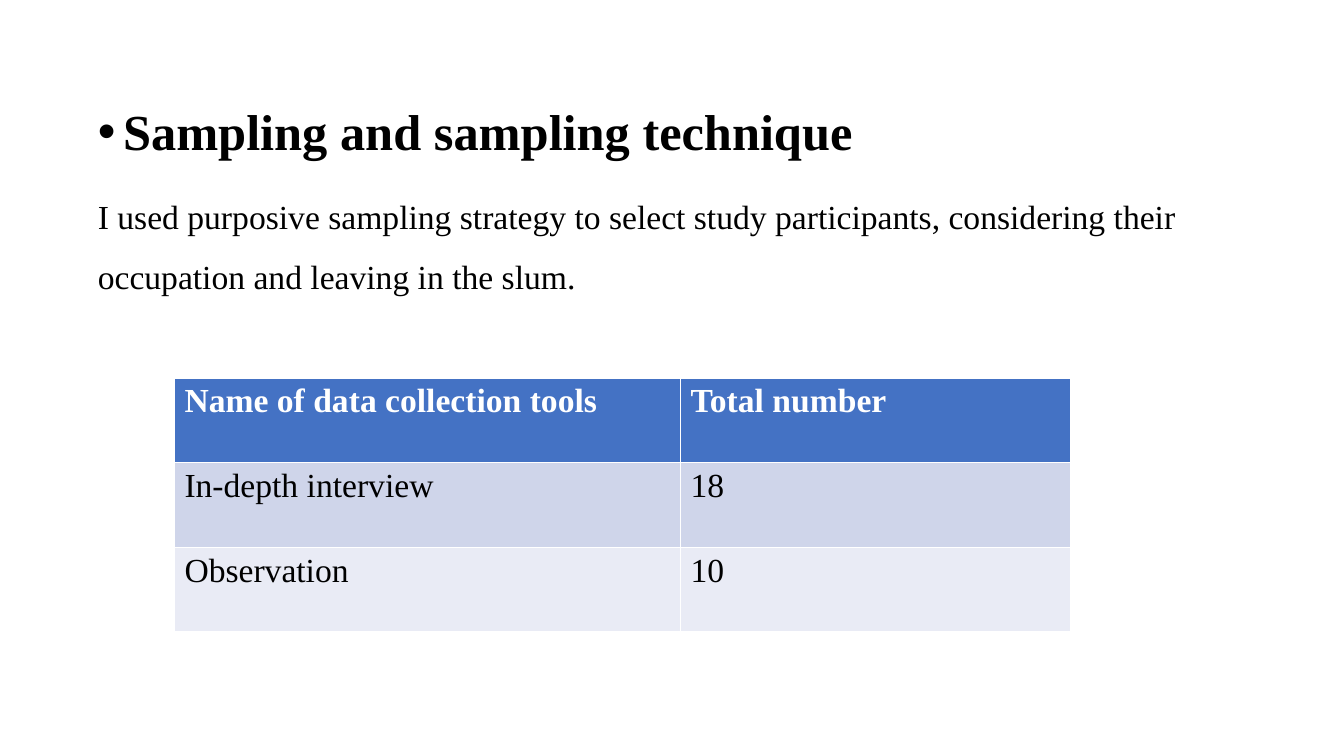
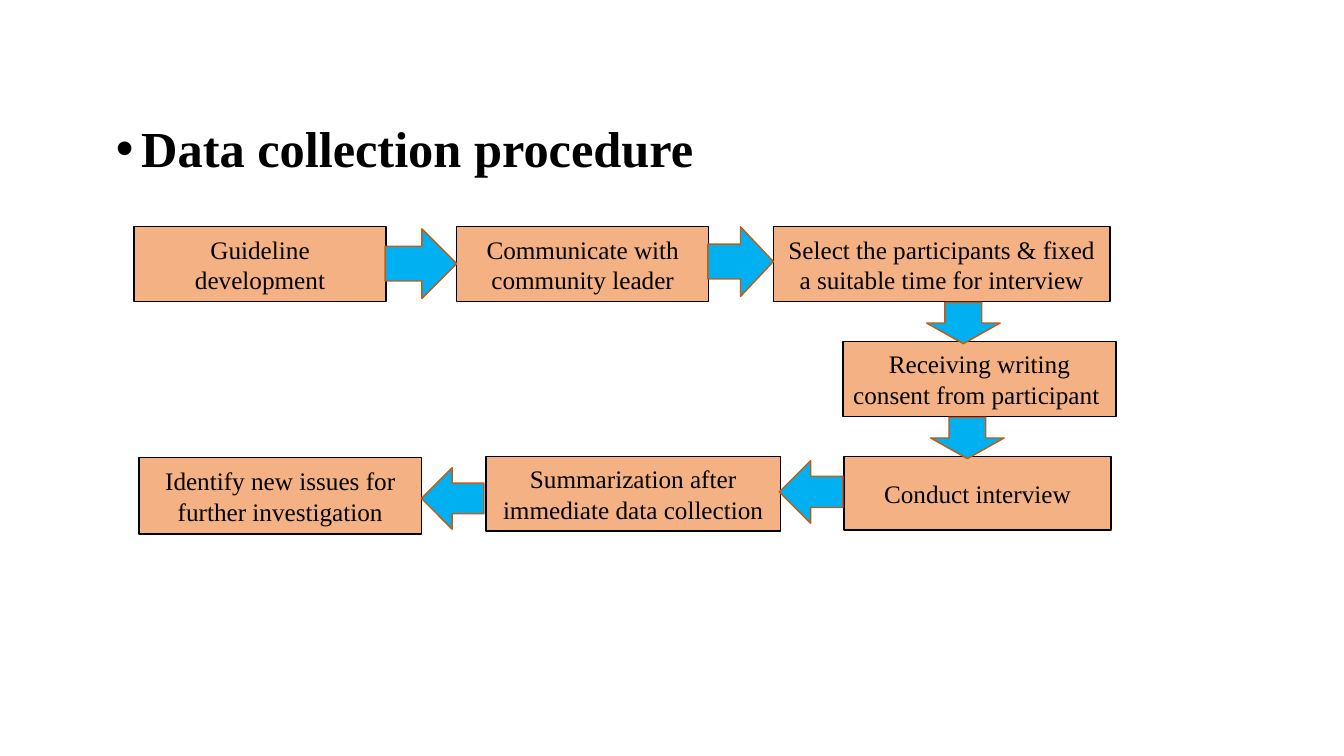
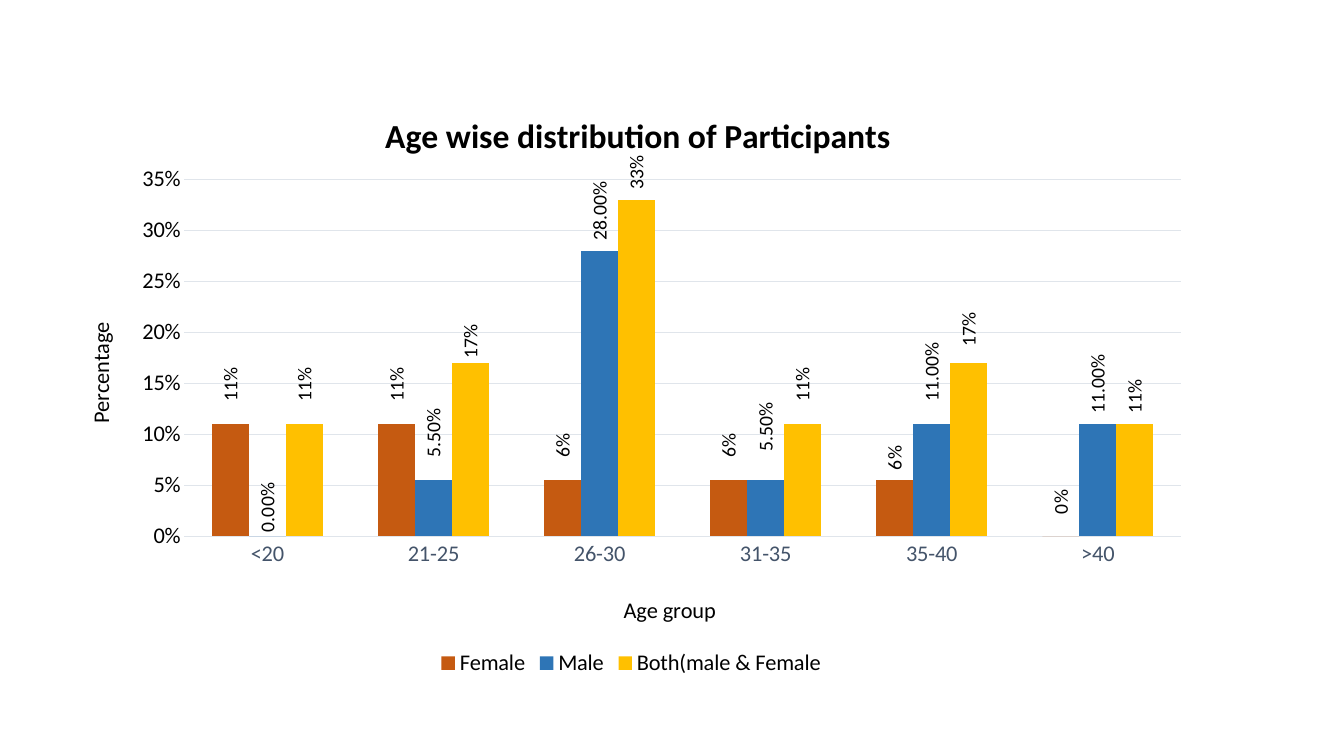
from copy import deepcopy

from lxml import etree
from pptx import Presentation
from pptx.chart.data import CategoryChartData
from pptx.dml.color import RGBColor
from pptx.enum.chart import (XL_CHART_TYPE as CHART, XL_LABEL_POSITION as LABEL,
                             XL_LEGEND_POSITION as LEGEND, XL_TICK_MARK as TICK)
from pptx.enum.shapes import MSO_SHAPE as SHAPE
from pptx.enum.text import MSO_ANCHOR as ANCHOR, MSO_AUTO_SIZE as AUTO, PP_ALIGN as ALIGN
from pptx.oxml.ns import qn
from pptx.util import Inches, Pt

COLORS = {
    "text": "000000", "white": "FFFFFF", "header": "4472C4",
    "band_dark": "CFD5EA", "band_light": "E9EBF5",
    "step": "F4B183", "arrow": "00B0F0", "arrow_line": "C55A11",
    "grid": "E0E5EB", "category": "44546A",
    "female": "C55A11", "male": "2E75B6", "both": "FFC000",
}
SERIF, SANS = "Times New Roman", "Calibri"


def rgb(name):
    return RGBColor.from_string(COLORS[name])


def set_font(font, size, color="text", name=SERIF, bold=False):
    font.name, font.size, font.bold = name, Pt(size), bold
    font.color.rgb = rgb(color)


def set_bullet(p, char=None):
    pPr = p._p.get_or_add_pPr()
    indent = Inches(0.25) if char else 0
    pPr.set("marL", str(indent))
    pPr.set("indent", str(-indent))
    if char:
        pPr.insert_element_before(etree.Element(qn("a:buFont"), typeface="Arial"), "a:defRPr")
        pPr.insert_element_before(etree.Element(qn("a:buChar"), char=char), "a:defRPr")
    else:
        pPr.insert_element_before(etree.Element(qn("a:buNone")), "a:defRPr")


# Slide with a bulleted heading and optional text in the body placeholder
def add_body_slide(prs, box, heading, text=None):
    s = prs.slides.add_slide(prs.slide_layouts[1])
    title = s.shapes.title
    title.element.getparent().remove(title.element)
    body = s.placeholders[1]
    body.left, body.top, body.width, body.height = map(Inches, box)
    tf = body.text_frame
    tf.auto_size, tf.vertical_anchor = AUTO.NONE, ANCHOR.TOP
    p = tf.paragraphs[0]
    p.text, p.line_spacing, p.space_before = heading, 0.9, Pt(10)
    set_font(p.font, 36, bold=True)
    set_bullet(p, "•")
    if text:
        p = tf.add_paragraph()
        p.text, p.line_spacing, p.space_before = text, 1.5, Pt(10)
        set_font(p.font, 24)
        set_bullet(p)
    return s


# Table with a header row and alternating bands
def add_tools_table(s, left, top, widths, row_height, rows):
    frame = s.shapes.add_table(len(rows), len(widths), Inches(left), Inches(top),
                               Inches(sum(widths)), Inches(row_height * len(rows)))
    table = frame.table
    for column, width in zip(table.columns, widths):
        column.width = Inches(width)
    fills = ["header", "band_dark", "band_light"]
    for i, row in enumerate(rows):
        for j, text in enumerate(row):
            cell = table.cell(i, j)
            cell.text = text
            cell.fill.solid()
            cell.fill.fore_color.rgb = rgb(fills[i])
            set_font(cell.text_frame.paragraphs[0].font, 24,
                     "text" if i else "white", bold=i == 0)


# Flow chart: offsets are counted from its top left corner
def add_flow(s, left, top, steps, arrows):
    def add_block(kind, box, fill, line):
        x, y, w, h = box
        sp = s.shapes.add_shape(kind, Inches(left + x), Inches(top + y), Inches(w), Inches(h))
        sp.shadow.inherit = False
        sp.fill.solid()
        sp.fill.fore_color.rgb = rgb(fill)
        sp.line.color.rgb = rgb(line)
        sp.line.width = Pt(1)
        return sp

    for text, *box in steps:
        tf = add_block(SHAPE.RECTANGLE, box, "step", "text").text_frame
        tf.word_wrap, tf.vertical_anchor = True, ANCHOR.MIDDLE
        p = tf.paragraphs[0]
        p.text, p.alignment = text, ALIGN.CENTER
        set_font(p.font, 18)
    for kind, *box in arrows:
        add_block(kind, box, "arrow", "arrow_line")


# Chart parts are placed by fractions of the chart's size
def set_layout(element, index, **values):
    layout = element.find(qn("c:layout"))
    if layout is None:
        layout = etree.Element(qn("c:layout"))
        element.insert(index, layout)
    manual = etree.SubElement(layout, qn("c:manualLayout"))
    for tag, value in values.items():
        etree.SubElement(manual, qn("c:" + tag)).set("val", str(value))


def set_title(title, text, size, x, y, bold=False):
    p = title.text_frame.paragraphs[0]
    p.text = text
    set_font(p.font, size, name=SANS, bold=bold)
    set_layout(title.element, 1, xMode="edge", yMode="edge", x=x, y=y)


def add_value_labels(series, ser, number_format, lifts):
    labels = series.data_labels
    labels.show_value = True
    labels.position = LABEL.OUTSIDE_END
    labels.number_format, labels.number_format_is_linked = number_format, False
    set_font(labels.font, 14, name=SANS)
    dLbls = ser.find(qn("c:dLbls"))
    body = dLbls.find(qn("c:txPr")).find(qn("a:bodyPr"))
    body.set("rot", "-5400000")
    body.set("vert", "horz")
    for i, lift in enumerate(lifts):
        if lift:
            series.points[i].data_label.position = LABEL.OUTSIDE_END
    # Raised labels keep the format of their series
    for label in dLbls.findall(qn("c:dLbl")):
        lift = lifts[int(label.find(qn("c:idx")).get("val"))]
        old = label.find(qn("c:txPr"))
        if old is not None:
            label.remove(old)
        set_layout(label, 1, x=0, y=-lift)
        label.insert(2, deepcopy(dLbls.find(qn("c:numFmt"))))
        spPr = label.find(qn("c:spPr"))
        at = 3 if spPr is None else label.index(spPr) + 1
        label.insert(at, deepcopy(dLbls.find(qn("c:txPr"))))


def add_age_chart(s, box, categories, series_rows):
    data = CategoryChartData()
    data.categories = categories
    for name, _, _, values, _ in series_rows:
        data.add_series(name, values)
    chart = s.shapes.add_chart(CHART.COLUMN_CLUSTERED, *map(Inches, box), data).chart
    set_font(chart.font, 10, name=SANS)
    chart.has_title = True
    set_title(chart.chart_title, "Age wise distribution of Participants", 24, 0.28, 0.05, True)
    plot_area = next(chart.element.iter(qn("c:plotArea")))
    set_layout(plot_area, 0, layoutTarget="inner", xMode="edge", yMode="edge",
               x=0.11, y=0.17, w=0.87, h=0.59)

    # Legend
    chart.has_legend = True
    chart.legend.position, chart.legend.include_in_layout = LEGEND.BOTTOM, False
    set_font(chart.legend.font, 16, name=SANS)

    # Axes
    cat, val = chart.category_axis, chart.value_axis
    for axis, color in ((cat, "category"), (val, "text")):
        axis.major_tick_mark = axis.minor_tick_mark = TICK.NONE
        set_font(axis.tick_labels.font, 16, color, SANS)
    set_title(cat.axis_title, "Age group", 16, 0.49, 0.85)
    set_title(val.axis_title, "Percentage", 16, 0.02, 0.4)
    val.minimum_scale, val.maximum_scale, val.major_unit = 0, 0.35, 0.05
    val.tick_labels.number_format, val.tick_labels.number_format_is_linked = "0%", False
    val.format.line.fill.background()
    for line in (cat.format.line, val.major_gridlines.format.line):
        line.color.rgb = rgb("grid")
        line.width = Pt(0.75)

    # Series
    plot = chart.plots[0]
    plot.gap_width, plot.overlap, plot.vary_by_categories = 150, 0, False
    sers = plot_area.iter(qn("c:ser"))
    for series, ser, (_, color, number_format, _, lifts) in zip(
            plot.series, list(sers), series_rows):
        series.format.fill.solid()
        series.format.fill.fore_color.rgb = rgb(color)
        add_value_labels(series, ser, number_format, lifts)


def main():
    prs = Presentation()
    prs.slide_width, prs.slide_height = Inches(13.33), Inches(7.5)

    # Sampling
    s = add_body_slide(
        prs, (0.87, 1.01, 11.99, 6.24), "Sampling and sampling technique",
        "I used purposive sampling strategy to select study participants, "
        "considering their occupation and leaving in the slum.")
    add_tools_table(s, 1.73, 3.75, (5.02, 3.87), 0.84, [
        ("Name of data collection tools", "Total number"),
        ("In-depth interview", "18"),
        ("Observation", "10"),
    ])

    # Procedure
    s = add_body_slide(prs, (1.05, 1.18, 12.16, 6.17), "Data collection procedure")
    add_flow(s, 1.33, 2.25, [
        ("Guideline development", 0, 0, 2.5, 0.74),
        ("Communicate with community leader", 3.2, 0, 2.5, 0.74),
        ("Select the participants & fixed a suitable time for interview", 6.34, 0, 3.34, 0.74),
        ("Receiving writing consent from participant ", 7.03, 1.14, 2.71, 0.74),
        ("Conduct interview", 7.04, 2.28, 2.65, 0.73),
        ("Summarization after immediate data collection", 3.49, 2.28, 2.92, 0.74),
        ("Identify new issues for further investigation", 0.05, 2.29, 2.8, 0.76),
    ], [
        (SHAPE.RIGHT_ARROW, 2.49, 0.02, 0.71, 0.69),
        (SHAPE.RIGHT_ARROW, 5.69, 0, 0.65, 0.69),
        (SHAPE.DOWN_ARROW, 7.86, 0.75, 0.73, 0.41),
        (SHAPE.DOWN_ARROW, 7.9, 1.89, 0.73, 0.41),
        (SHAPE.LEFT_ARROW, 6.4, 2.32, 0.63, 0.62),
        (SHAPE.LEFT_ARROW, 2.85, 2.39, 0.62, 0.61),
    ])

    # Participants: name, colour, label format, values, label lifts
    s = prs.slides.add_slide(prs.slide_layouts[6])
    add_age_chart(s, (0.58, 0.76, 11.36, 6), ["<20", "21-25", "26-30", "31-35", "35-40", ">40"], [
        ("Female", "female", "0%", (0.11, 0.11, 0.055, 0.055, 0.055, 0),
         (0.03, 0.03, 0.03, 0.03, 0.01, 0.03)),
        ("Male", "male", "0.00%", (0, 0.055, 0.28, 0.055, 0.11, 0.11),
         (0, 0.03, 0.01, 0.04, 0.03, 0.01)),
        ("Both(male & Female", "both", "0%", (0.11, 0.17, 0.33, 0.11, 0.17, 0.11),
         (0.03, 0, 0.01, 0.03, 0.02, 0.01)),
    ])
    prs.save("out.pptx")


if __name__ == "__main__":
    main()
